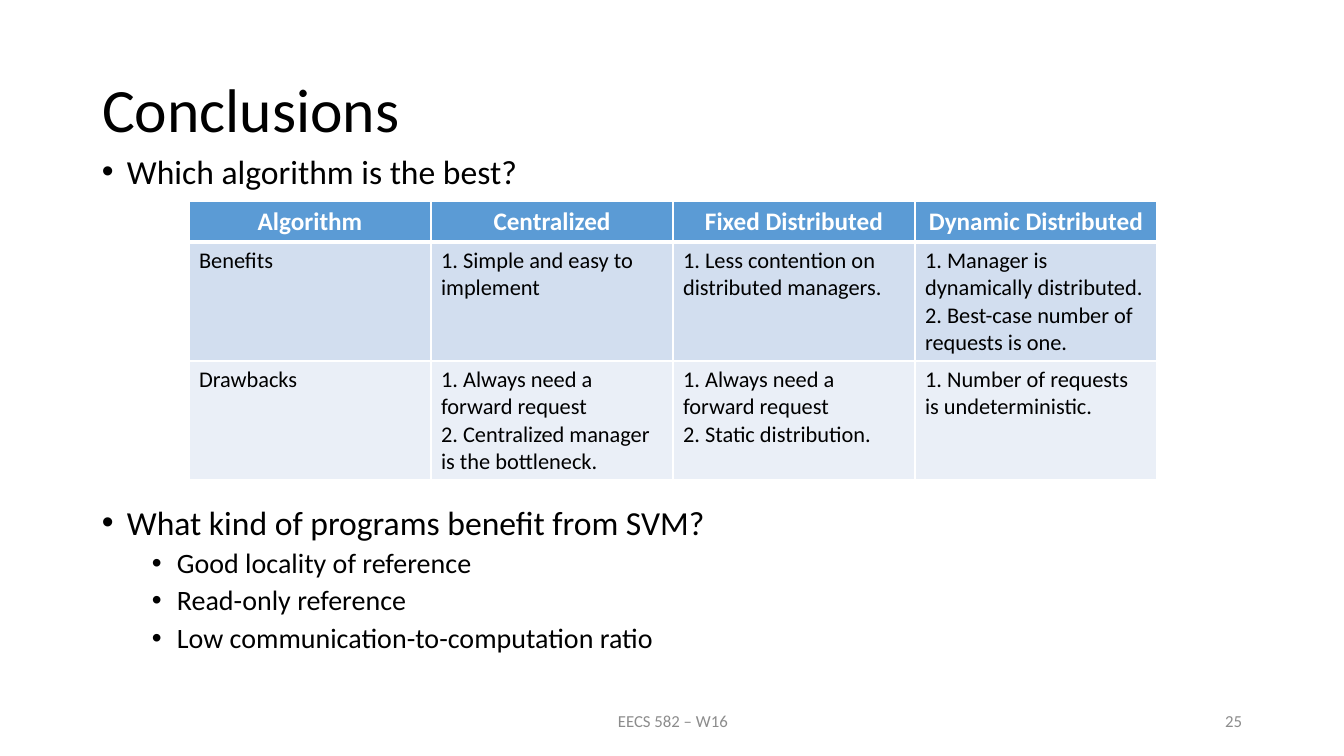
"""Build the Conclusions slide: algorithm comparison table and closing bullets."""
from dataclasses import dataclass

import pptx
import pptx.dml.color
import pptx.enum.text
import pptx.oxml
import pptx.oxml.ns
import pptx.util

ALIGN = pptx.enum.text.PP_ALIGN
ANCHOR = pptx.enum.text.MSO_ANCHOR

TITLE = "Conclusions"
BULLETS = [
    (0, 10, "Which algorithm is the best?"),
    (0, 225, "What kind of programs benefit from SVM?"),
    (1, 5, "Good locality of reference"),
    (1, 5, "Read-only reference"),
    (1, 5, "Low communication-to-computation ratio"),
]
TABLE = [
    ["Algorithm", "Centralized", "Fixed Distributed", "Dynamic Distributed"],
    [
        "Benefits",
        "1. Simple and easy to implement",
        "1. Less contention on distributed managers.",
        "1. Manager is dynamically distributed.\n2. Best-case number of requests is one.",
    ],
    [
        "Drawbacks",
        "1. Always need a forward request\n2. Centralized manager is the bottleneck.",
        "1. Always need a forward request\n2. Static distribution.",
        "1. Number of requests is undeterministic.",
    ],
]
FOOTERS = [
    ("EECS 582 – W16", (446, 701, 454, 40), ALIGN.CENTER),
    ("25", (950, 701, 302, 40), ALIGN.RIGHT),
]

SLIDE_SIZE = (1344, 756)
TITLE_BOX = (92, 40, 1160, 146)
BODY_BOX = (92, 150, 1160, 550)
TABLE_AT = (189, 201)
COL_WIDTH = 242
ROW_HEIGHTS = [41, 119, 119]
INDENT = 25


@dataclass(frozen=True)
class Theme:
    """Colours, font and type sizes."""
    font: str = "Calibri"
    text: str = "000000"
    muted: str = "8C8C8C"
    white: str = "FFFFFF"
    rows: tuple = ("5B9BD5", "D2DEEF", "EAEFF7")
    title: int = 44
    levels: tuple = (24, 20)
    header: int = 18
    cell: int = 16
    footer: int = 12


THEME = Theme()


def px(n):
    """Turn pixels into EMU."""
    return round(n * 914400 / 100.8)


def rgb(value):
    """Turn a hex string into a colour."""
    return pptx.dml.color.RGBColor.from_string(value)


def apply(obj, values):
    """Set attributes from a dict."""
    for name, value in values.items():
        setattr(obj, name, value)


def write(p, text, size, color=THEME.text, bold=False, **layout):
    """Fill a paragraph with one formatted run."""
    r = p.add_run()
    r.text = text
    apply(r.font, {"name": THEME.font, "size": pptx.util.Pt(size), "bold": bold})
    r.font.color.rgb = rgb(color)
    apply(p, layout)


def next_paragraph(tf, index):
    """Return the first paragraph or a new one."""
    return tf.add_paragraph() if index else tf.paragraphs[0]


def add_text(slide, box, anchor):
    """Add a wrapping text box and return its frame."""
    tf = slide.shapes.add_textbox(*map(px, box)).text_frame
    apply(tf, {"word_wrap": True, "vertical_anchor": anchor})
    return tf


def add_bullet(p, level):
    """Give a paragraph a hanging bullet."""
    pPr = p._p.get_or_add_pPr()
    pPr.set("marL", str(px(INDENT * (1 + 2 * level))))
    pPr.set("indent", str(px(-INDENT)))
    ns = pptx.oxml.ns.nsdecls("a")
    pPr.append(pptx.oxml.parse_xml(f'<a:buFont {ns} typeface="Arial"/>'))
    pPr.append(pptx.oxml.parse_xml(f'<a:buChar {ns} char="•"/>'))


def add_borders(cell, widths):
    """Draw white cell borders, given widths in points by side."""
    tcPr = cell._tc.get_or_add_tcPr()
    for i, (side, width) in enumerate(widths.items()):
        tcPr.insert(i, pptx.oxml.parse_xml(
            f'<a:ln{side} {pptx.oxml.ns.nsdecls("a")} w="{pptx.util.Pt(width)}">'
            f'<a:solidFill><a:srgbClr val="{THEME.white}"/></a:solidFill></a:ln{side}>'))


def add_title(slide):
    """Place and format the title placeholder."""
    sp = slide.shapes.title
    apply(sp, dict(zip(("left", "top", "width", "height"), map(px, TITLE_BOX))))
    tf = sp.text_frame
    apply(tf, {"word_wrap": True, "vertical_anchor": ANCHOR.MIDDLE,
               "auto_size": pptx.enum.text.MSO_AUTO_SIZE.NONE})
    write(tf.paragraphs[0], TITLE, THEME.title, alignment=ALIGN.LEFT, line_spacing=0.9)


def add_body(slide):
    """Add the bullets above and below the table."""
    tf = add_text(slide, BODY_BOX, ANCHOR.TOP)
    for i, (level, gap, text) in enumerate(BULLETS):
        p = next_paragraph(tf, i)
        write(p, text, THEME.levels[level], level=level, line_spacing=0.9,
              space_before=pptx.util.Pt(gap))
        add_bullet(p, level)


def add_comparison(slide):
    """Add the algorithm table."""
    cols = len(TABLE[0])
    size = (COL_WIDTH * cols, sum(ROW_HEIGHTS))
    table = slide.shapes.add_table(len(TABLE), cols, *map(px, TABLE_AT + size)).table
    for col in table.columns:
        col.width = px(COL_WIDTH)
    for i, row in enumerate(TABLE):
        table.rows[i].height = px(ROW_HEIGHTS[i])
        head = i == 0
        style = ({"size": THEME.header, "color": THEME.white, "bold": True,
                  "alignment": ALIGN.CENTER} if head else {"size": THEME.cell})
        for j, text in enumerate(row):
            cell = table.cell(i, j)
            cell.fill.solid()
            cell.fill.fore_color.rgb = rgb(THEME.rows[i])
            add_borders(cell, {"L": 1, "R": 1, "T": 3 if i == 1 else 1, "B": 3 if head else 1})
            for k, line in enumerate(text.split("\n")):
                write(next_paragraph(cell.text_frame, k), line, **style)


def main():
    """Build and save the slide."""
    prs = pptx.Presentation()
    prs.slide_width, prs.slide_height = map(px, SLIDE_SIZE)
    slide = prs.slides.add_slide(prs.slide_layouts[5])
    add_title(slide)
    for text, box, align in FOOTERS:
        tf = add_text(slide, box, ANCHOR.MIDDLE)
        write(tf.paragraphs[0], text, THEME.footer, THEME.muted, alignment=align)
    add_body(slide)
    add_comparison(slide)
    prs.save("out.pptx")


if __name__ == "__main__":
    main()
